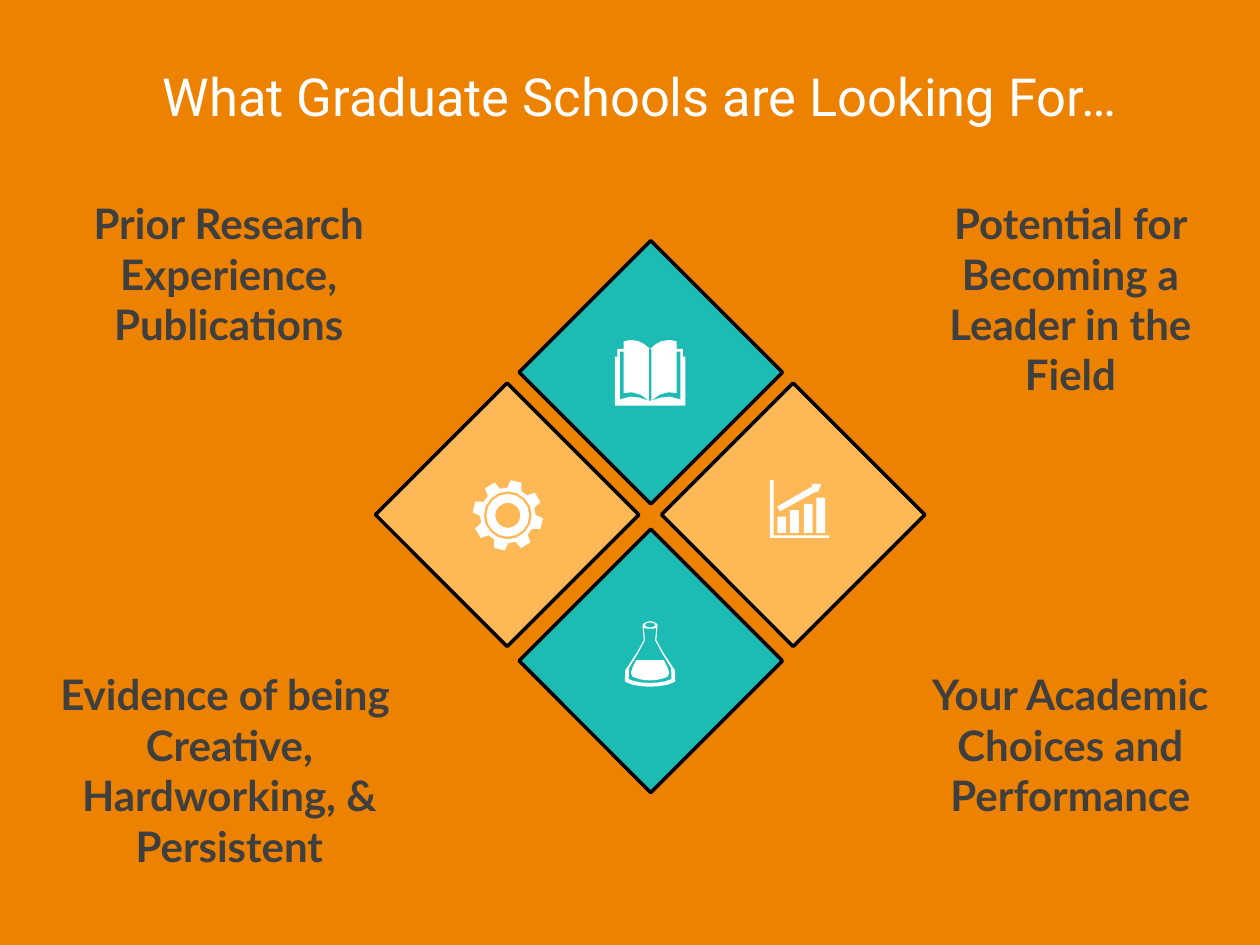
from math import cos, pi, radians, sin

from pptx import Presentation
from pptx.dml.color import RGBColor
from pptx.enum.shapes import MSO_SHAPE as Preset
from pptx.enum.text import MSO_ANCHOR as Anchor, PP_ALIGN as Align
from pptx.util import Inches, Pt

COLORS = {
    "background": "ED8100",
    "teal": "1CBBB4",
    "amber": "FEB856",
    "outline": "000000",
    "white": "FFFFFF",
    "text": "3F3F3F",
}
UNITS_PER_INCH = 1000  # freeform points are rounded to whole units


def color(name):
    return RGBColor.from_string(COLORS[name])


def trace(*steps, samples=3):
    """Return points for steps of (x, y) lines and six-number Bezier curves."""
    points = []
    for step in steps:
        if len(step) == 2:
            points.append(step)
            continue
        start, first, second, end = points[-1], step[:2], step[2:4], step[4:]
        for index in range(1, samples + 1):
            t = index / samples
            u = 1 - t
            points.append(tuple(
                u**3 * a + 3 * u * u * t * b + 3 * u * t * t * c + t**3 * d
                for a, b, c, d in zip(start, first, second, end)))
    return points


def mirror(points):
    return [(-x, y) for x, y in reversed(points)]


def symmetric(*steps):
    """Close a right-hand profile with its reflection in the axis x = 0."""
    half = trace(*steps)
    return half + mirror(half)


def ellipse(center_x, center_y, radius_x, radius_y, count=16):
    return [(center_x + radius_x * cos(2 * pi * i / count),
             center_y + radius_y * sin(2 * pi * i / count)) for i in range(count)]


def rectangle(left, top, right, bottom):
    return [(left, top), (right, top), (right, bottom), (left, bottom)]


def book_contours():
    """Book, measured from the top of its spine."""
    cover = symmetric((0, 0.07), (0.05, 0.02, 0.09, 0, 0.14, 0),
                      (0.16, 0, 0.18, 0, 0.21, 0.01), (0.21, 0.07), (0.26, 0.07),
                      (0.26, 0.13), (0.28, 0.13), (0.28, 0.52))
    page_edge = trace((0.01, 0.48), (0.1, 0.45, 0.14, 0.43, 0.24, 0.47),
                      (0.24, 0.09), (0.21, 0.09), (0.21, 0.42),
                      (0.15, 0.4, 0.07, 0.42, 0.01, 0.48))
    spine = rectangle(-0.01, 0.07, 0.01, 0.48)
    return [cover, page_edge, mirror(page_edge), spine]


def gear_contours():
    """Gear, measured from its center."""
    teeth = []
    for tooth in range(8):
        middle = -76 + 45 * tooth
        for offset, radius in ((-15, 0.22), (-9, 0.28), (9, 0.28), (15, 0.22)):
            angle = radians(middle + offset)
            teeth.append((radius * cos(angle), radius * sin(angle)))
    return [teeth] + [ellipse(0, 0, r, r) for r in (0.19, 0.17, 0.1)]


def flask_contours():
    """Flask, measured from the top of its axis."""
    glass = symmetric((0, 0), (0.03, 0, 0.06, 0.02, 0.06, 0.03), (0.05, 0.15),
                      (0.05, 0.21, 0.28, 0.44, 0.2, 0.48),
                      (0.15, 0.51, 0.07, 0.52, 0, 0.52))
    inside = symmetric((0, 0.06), (0.02, 0.06, 0.04, 0.06, 0.05, 0.05), (0.04, 0.15),
                       (0.04, 0.2, 0.24, 0.42, 0.17, 0.46),
                       (0.13, 0.48, 0.06, 0.49, 0, 0.49))
    liquid = symmetric((0.11, 0.31), (0.14, 0.37, 0.17, 0.42, 0.14, 0.44),
                       (0.1, 0.46, 0.05, 0.47, 0, 0.47))
    return [glass, inside, ellipse(0, 0.03, 0.04, 0.02, count=12), liquid]


def growth_contours():
    """Growth chart, measured from its top left corner."""
    axes = [(0, 0), (0.03, 0), (0.03, 0.44), (0.47, 0.44), (0.47, 0.46), (0, 0.46)]
    arrow = [(0.33, 0.03), (0.41, 0.03), (0.38, 0.1), (0.37, 0.09),
             (0.08, 0.25), (0.06, 0.21), (0.34, 0.05)]
    bars = []
    for index, top in enumerate((0.29, 0.24, 0.19, 0.14)):
        left = 0.06 + 0.1 * index + 0.01 * (index > 1)
        bars.append(rectangle(left, top, left + 0.07, 0.42))
    return [axes, arrow] + bars


def add_icon(shapes, left, top, contours):
    scaled = [[(x * UNITS_PER_INCH, y * UNITS_PER_INCH) for x, y in contour]
              for contour in contours]
    builder = shapes.build_freeform(*scaled[0][0], scale=Inches(1) / UNITS_PER_INCH)
    builder.add_line_segments(scaled[0][1:])
    for contour in scaled[1:]:
        builder.move_to(*contour[0])
        builder.add_line_segments(contour[1:])
    icon = builder.convert_to_shape(Inches(left), Inches(top))
    icon.shadow.inherit = False
    icon.fill.solid()
    icon.fill.fore_color.rgb = color("white")
    icon.line.fill.background()


def add_diamonds(slide, left, top, size=2.09):
    """Place four diamonds around a center, each with its icon."""
    shapes = slide.shapes.add_group_shape().shapes
    tiles = [
        (1.14, 0, "teal", book_contours(), 1.04, 0.79),
        (1.14, 2.29, "teal", flask_contours(), 1.04, 0.73),
        (2.27, 1.13, "amber", growth_contours(), 0.86, 0.77),
        (0, 1.13, "amber", gear_contours(), 1.05, 1.05),
    ]
    for x, y, fill, contours, icon_x, icon_y in tiles:
        diamond = shapes.add_shape(Preset.DIAMOND, Inches(left + x), Inches(top + y),
                                   Inches(size), Inches(size))
        diamond.shadow.inherit = False
        diamond.fill.solid()
        diamond.fill.fore_color.rgb = color(fill)
        diamond.line.color.rgb = color("outline")
        diamond.line.width = Pt(2)
        add_icon(shapes, left + x + icon_x, top + y + icon_y, contours)


def add_text(slide, box, lines, font_name, size, fill, bold=False, inset=0.05):
    """Add a text box with one (text, alignment) pair per paragraph."""
    shape = slide.shapes.add_textbox(*map(Inches, box))
    frame = shape.text_frame
    frame.word_wrap = True
    frame.margin_left = frame.margin_right = Inches(0.1)
    frame.margin_top = frame.margin_bottom = Inches(inset)
    for index, (text, alignment) in enumerate(lines):
        paragraph = frame.add_paragraph() if index else frame.paragraphs[0]
        paragraph.text = text
        paragraph.alignment = alignment
        paragraph.font.name = font_name
        paragraph.font.size = Pt(size)
        paragraph.font.bold = bold
        paragraph.font.color.rgb = color(fill)
    return frame


def add_title(slide, box):
    frame = add_text(slide, box, [("What Graduate Schools are Looking For…", Align.CENTER)],
                     "Roboto", 30, "white", inset=0.1)
    frame.vertical_anchor = Anchor.MIDDLE


def add_quality(slide, box, *lines):
    add_text(slide, box, lines, "Lato", 24, "text", bold=True)


def main():
    presentation = Presentation()
    presentation.slide_width, presentation.slide_height = Inches(10), Inches(7.5)
    slide = presentation.slides.add_slide(presentation.slide_layouts[6])
    slide.background.fill.solid()
    slide.background.fill.fore_color.rgb = color("background")

    add_title(slide, (0.08, 0.24, 10, 1.03))
    add_quality(slide, (0.54, 1.52, 2.55, 1.56),
                ("Prior Research Experience,", Align.CENTER), ("Publications", Align.CENTER))
    add_quality(slide, (0.38, 5.26, 2.88, 1.45), ("Evidence of being", Align.LEFT),
                ("Creative, Hardworking, & Persistent", Align.CENTER))
    add_quality(slide, (7.22, 1.52, 2.55, 1.7),
                ("Potential for Becoming a Leader in the Field", Align.CENTER))
    add_quality(slide, (7.22, 5.26, 2.55, 1.7),
                ("Your Academic", Align.CENTER), ("Choices and Performance", Align.CENTER))
    add_diamonds(slide, 2.98, 1.91)
    presentation.save("out.pptx")


if __name__ == "__main__":
    main()
